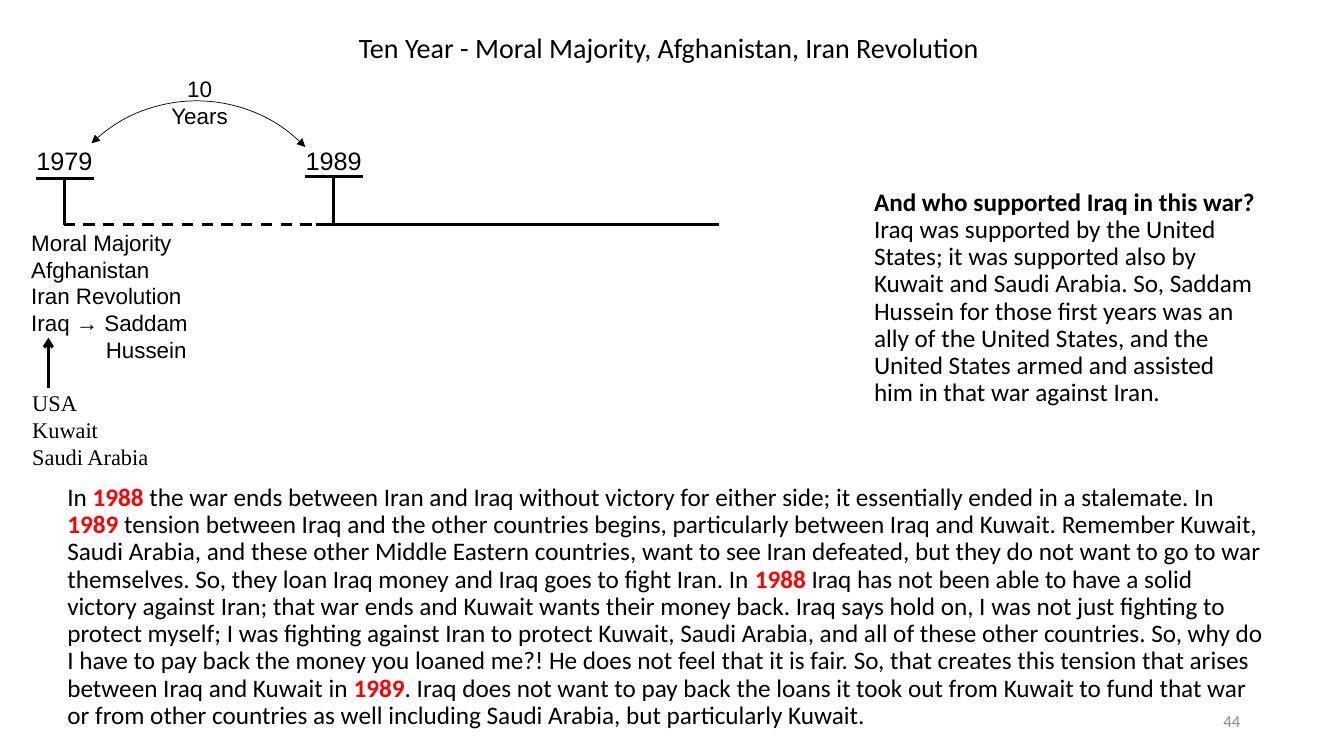
from lxml.etree import SubElement
from pptx import Presentation
from pptx.dml.color import RGBColor
from pptx.enum.dml import MSO_LINE
from pptx.enum.shapes import MSO_CONNECTOR, MSO_SHAPE
from pptx.enum.text import MSO_ANCHOR, PP_ALIGN
from pptx.oxml.ns import qn
from pptx.util import Inches, Pt

BLACK, RED, GREY = "000000", "FF0000", "8C8C8C"
AXIS_Y = 2.23


def color(hex_code):
    return RGBColor.from_string(hex_code)


class TimelineSlide:
    """Holds the label style and the slide being drawn."""

    label_font = "Arial"
    body_font = "Calibri"
    label_inset = 0.04

    def __init__(self, prs):
        self.slide = prs.slides.add_slide(prs.slide_layouts[5])
        self.shapes = self.slide.shapes

    def format_run(self, r, size, font, hex_code=BLACK, bold=False):
        r.font.size = Pt(size)
        r.font.name = font
        r.font.bold = bold
        r.font.color.rgb = color(hex_code)

    def place(self, sp, left, top, width, height):
        sp.left, sp.top = Inches(left), Inches(top)
        sp.width, sp.height = Inches(width), Inches(height)

    def title(self, text, box):
        sp = self.shapes.title
        self.place(sp, *box)
        tf = sp.text_frame
        tf.text = text
        tf.vertical_anchor = MSO_ANCHOR.MIDDLE
        p = tf.paragraphs[0]
        p.alignment = PP_ALIGN.CENTER
        p.line_spacing = 0.9
        self.format_run(p.runs[0], 20, self.body_font)

    def text_box(self, box):
        sp = self.shapes.add_textbox(*map(Inches, box))
        tf = sp.text_frame
        tf.word_wrap = True
        return tf

    def body(self, parts, box):
        """Add one paragraph from (text, colour, bold) parts."""
        p = self.text_box(box).paragraphs[0]
        p.line_spacing = 0.9
        for text, hex_code, bold in parts:
            r = p.add_run()
            r.text = text
            self.format_run(r, 18, self.body_font, hex_code, bold)

    def label(self, text, box, size=16, font=label_font, align=PP_ALIGN.LEFT):
        tf = self.text_box(box)
        tf.margin_left = tf.margin_right = Inches(self.label_inset)
        tf.margin_top = tf.margin_bottom = Inches(self.label_inset)
        tf.text = text
        for p in tf.paragraphs:
            p.alignment = align
            self.format_run(p.runs[0], size, font)
        return tf

    def page_number(self, text, box):
        tf = self.text_box(box)
        tf.vertical_anchor = MSO_ANCHOR.MIDDLE
        tf.text = text
        p = tf.paragraphs[0]
        p.alignment = PP_ALIGN.RIGHT
        self.format_run(p.runs[0], 12, self.body_font, GREY)

    def arrowheads(self, sp, **ends):
        for end, kind in ends.items():
            SubElement(sp.line._get_or_add_ln(), qn(f"a:{end}"), type=kind)

    def line(self, x1, y1, x2, y2, width=2, dash=None):
        cx = self.shapes.add_connector(
            MSO_CONNECTOR.STRAIGHT, *map(Inches, (x1, y1, x2, y2)))
        cx.line.color.rgb = color(BLACK)
        cx.line.width = Pt(width)
        if dash:
            cx.line.dash_style = dash
        SubElement(cx._element.spPr, qn("a:effectLst"))
        return cx

    def span_arc(self, box, rotation):
        sp = self.shapes.add_shape(MSO_SHAPE.ARC, *map(Inches, box))
        sp.rotation = rotation
        sp.shadow.inherit = False
        sp.fill.background()
        sp.line.color.rgb = color(BLACK)
        sp.line.width = Pt(0.5)
        self.arrowheads(sp, headEnd="triangle", tailEnd="triangle")

    def year(self, text, left, underline_y):
        """Add an underlined year with a tick down to the time axis."""
        start, tick = left + 0.05, left + 0.33
        self.line(start, underline_y, start + 0.57, underline_y)
        self.line(tick, underline_y, tick, AXIS_Y)
        self.label(text, (left, 1.4, 0.66, 0.36), 18, align=PP_ALIGN.CENTER)


def main():
    prs = Presentation()
    prs.slide_width, prs.slide_height = Inches(13.33), Inches(7.5)
    s = TimelineSlide(prs)

    s.title("Ten Year - Moral Majority, Afghanistan, Iran Revolution ",
            (0, 0.24, 13.33, 0.5))
    s.body([
        ("In ", BLACK, False),
        ("1988", RED, True),
        (" the war ends between Iran and Iraq without victory for either side; "
         "it essentially ended in a stalemate. In ", BLACK, False),
        ("1989", RED, True),
        (" tension between Iraq and the other countries begins, particularly "
         "between Iraq and Kuwait. Remember Kuwait, Saudi Arabia, and these "
         "other Middle Eastern countries, want to see Iran defeated, but they "
         "do not want to go to war themselves. So, they loan Iraq money and "
         "Iraq goes to fight Iran. In ", BLACK, False),
        ("1988", RED, True),
        (" Iraq has not been able to have a solid victory against Iran; that "
         "war ends and Kuwait wants their money back. Iraq says hold on, I was "
         "not just fighting to protect myself; I was fighting against Iran to "
         "protect Kuwait, Saudi Arabia, and all of these other countries. So, "
         "why do I have to pay back the money you loaned me?! He does not feel "
         "that it is fair. So, that creates this tension that arises between "
         "Iraq and Kuwait in ", BLACK, False),
        ("1989", RED, True),
        (". Iraq does not want to pay back the loans it took out from Kuwait "
         "to fund that war or from other countries as well including Saudi "
         "Arabia, but particularly Kuwait.", BLACK, False),
    ], (0.57, 4.76, 12.1, 2.5))
    s.page_number("44", (9.4, 6.95, 3, 0.4))
    s.body([
        ("And who supported Iraq in this war?", BLACK, True),
        (" Iraq was supported by the United States; it was supported also by "
         "Kuwait and Saudi Arabia. So, Saddam Hussein for those first years "
         "was an ally of the United States, and the United States armed and "
         "assisted him in that war against Iran.", BLACK, False),
    ], (8.57, 1.83, 3.99, 2.31))

    s.year("1979", 0.31, 1.77)
    s.year("1989", 2.98, 1.75)
    s.line(0.63, AXIS_Y, 3.13, AXIS_Y, dash=MSO_LINE.DASH)
    s.line(3.13, AXIS_Y, 7.13, AXIS_Y)
    s.span_arc((0.45, 1, 3, 3), 316)
    s.label("10 Years", (1.63, 0.71, 0.7, 0.6), align=PP_ALIGN.CENTER)

    events = s.label("Moral Majority\nAfghanistan\nIran Revolution\n"
                     "Iraq → Saddam\nHussein", (0.27, 2.23, 1.74, 1.46))
    hussein = events.paragraphs[-1]
    hussein._p.get_or_add_pPr().set("marL", str(Inches(0.74)))
    s.label("USA\nKuwait\nSaudi Arabia", (0.28, 3.82, 1.3, 0.9),
            font="Times New Roman")
    support = s.line(0.48, 3.35, 0.48, 3.85, 2.25)
    s.arrowheads(support, headEnd="arrow")

    prs.save("out.pptx")


if __name__ == "__main__":
    main()
